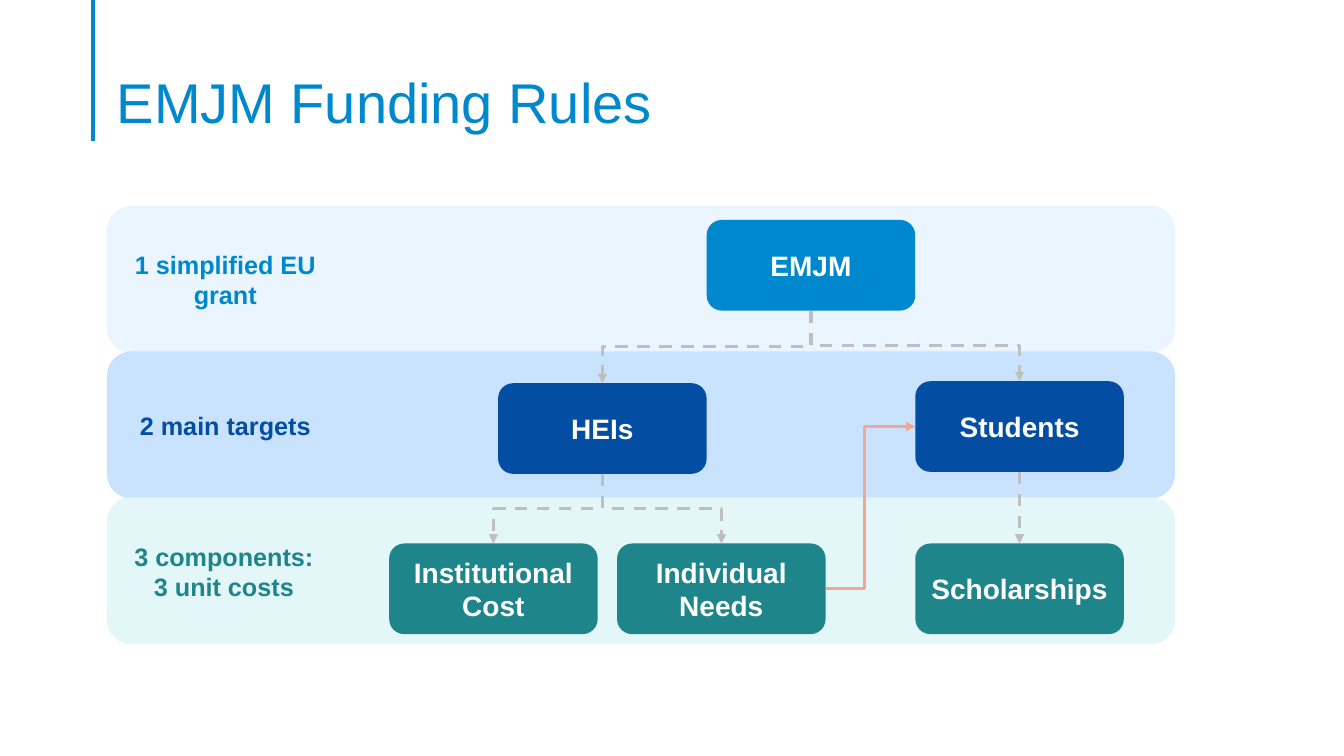
from pptx import Presentation
from pptx.dml.color import RGBColor
from pptx.enum.dml import MSO_LINE
from pptx.enum.shapes import MSO_CONNECTOR, MSO_SHAPE
from pptx.enum.text import MSO_ANCHOR, PP_ALIGN
from pptx.oxml.ns import qn
from pptx.util import Pt
from lxml import etree

BLUE, NAVY, TEAL = "0088CE", "034EA2", "1E858B"
GREY, CORAL, WHITE = "BFBFBF", "F1A798", "FFFFFF"
TOP, LEFT, BOTTOM, RIGHT = range(4)
NODE_W, NODE_H = 149, 64.8


def color(code):
    return RGBColor.from_string(code)


def write(shape, text, size=20, ink=WHITE, bold=True, align=PP_ALIGN.CENTER,
          anchor=MSO_ANCHOR.MIDDLE, spacing=None):
    frame = shape.text_frame
    frame.word_wrap = True
    frame.vertical_anchor = anchor
    frame.text = text
    for para in frame.paragraphs:
        para.alignment = align
        para.line_spacing = spacing
        font = para.font
        font.name, font.size, font.bold = "Arial", Pt(size), bold
        font.color.rgb = color(ink)


def panel(slide, x, y, w, h, fill):
    shape = slide.shapes.add_shape(
        MSO_SHAPE.ROUNDED_RECTANGLE, Pt(x), Pt(y), Pt(w), Pt(h))
    shape.shadow.inherit = False
    shape.fill.solid()
    shape.fill.fore_color.rgb = color(fill)
    shape.line.fill.background()
    return shape


def label(slide, x, y, w, h, text, **style):
    box = slide.shapes.add_textbox(Pt(x), Pt(y), Pt(w), Pt(h))
    write(box, text, **style)


def stroke(slide, kind, ink, ends=(0, 0, 0, 0)):
    line = slide.shapes.add_connector(kind, *[Pt(v) for v in ends])
    line.line.color.rgb = color(ink)
    line.line.width = Pt(2.25)
    etree.SubElement(line._element.spPr, qn("a:effectLst"))
    return line


def arrow(slide, start, end, sides=(BOTTOM, TOP), ink=GREY, dash=True,
          kind=MSO_CONNECTOR.ELBOW):
    line = stroke(slide, kind, ink)
    line.begin_connect(start, sides[0])
    line.end_connect(end, sides[1])
    if dash:
        line.line.dash_style = MSO_LINE.DASH
    tail = etree.SubElement(line.line._get_or_add_ln(), qn("a:tailEnd"))
    tail.set("type", "triangle")
    return line


def drop(slide, start, end):
    """Elbow that leaves downward: a quarter turn of the sideways elbow."""
    line = arrow(slide, start, end)
    x1, y1, x2, y2 = line.begin_x, line.begin_y, line.end_x, line.end_y
    long, wide = y2 - y1, abs(x2 - x1)
    line.left, line.top = (x1 + x2 - long) // 2, (y1 + y2 - wide) // 2
    line.width, line.height = long, wide
    frame = line._element.spPr.find(qn("a:xfrm"))
    frame.set("rot", str((270 if x2 > x1 else 90) * 60000))
    frame.set("flipH", "1" if x2 > x1 else "0")


def header(slide, x, y, w, h):
    # Accent rule and title
    stroke(slide, MSO_CONNECTOR.STRAIGHT, BLUE, (x, y, x, y + h))
    label(slide, x + 10, y + 38.2, w, 61.9, "EMJM Funding Rules", size=40,
          ink=BLUE, bold=False, align=PP_ALIGN.LEFT,
          anchor=MSO_ANCHOR.BOTTOM, spacing=0.9)


def diagram(slide, x, y, w, h):
    # Bands, each a third of the height with a slight overlap
    step = (h - 105) / 2
    for row, fill in enumerate(("EBF5FF", "C9E3FF", "E3F7F9")):
        panel(slide, x, y + row * step, w, 105, fill)

    # Boxes, as offsets within the diagram
    nodes = {}
    for name, dx, dy, fill in (
            ("EMJM", 428.4, 10.1, BLUE),
            ("HEIs", 279.4, 126.7, NAVY),
            ("Students", 577.4, 125.3, NAVY),
            ("Scholarships", 577.4, 241.2, TEAL),
            ("Individual Needs", 364.4, 241.2, TEAL),
            ("Institutional Cost", 201.6, 241.2, TEAL)):
        nodes[name] = panel(slide, x + dx, y + dy, NODE_W, NODE_H, fill)
        write(nodes[name], name)

    # Dashed flow downwards
    for start, end in (("EMJM", "Students"), ("EMJM", "HEIs"),
                       ("HEIs", "Institutional Cost"),
                       ("HEIs", "Individual Needs")):
        drop(slide, nodes[start], nodes[end])
    arrow(slide, nodes["Students"], nodes["Scholarships"],
          kind=MSO_CONNECTOR.STRAIGHT)

    # Band labels
    for text, dy, wide, high, ink in (
            ("1 simplified EU grant", 27.3, 159, 51, BLUE),
            ("2 main targets", 142.5, 159, 29, NAVY),
            ("3 components:\n3 unit costs", 235.4, 157, 51, TEAL)):
        label(slide, x + 5, y + dy, wide, high, text, size=18, ink=ink)

    # Link from needs to students, bent left of its middle
    link = arrow(slide, nodes["Individual Needs"], nodes["Students"],
                 (RIGHT, LEFT), CORAL, dash=False)
    shape = link._element.spPr.find(qn("a:prstGeom"))
    bends = shape.find(qn("a:avLst"))
    if bends is None:
        bends = etree.SubElement(shape, qn("a:avLst"))
    etree.SubElement(bends, qn("a:gd"), name="adj1", fmla="val 43600")


def main():
    deck = Presentation()
    deck.slide_width, deck.slide_height = Pt(960), Pt(540)
    slide = deck.slides.add_slide(deck.slide_layouts[6])
    header(slide, 66.4, 0, 828, 101)
    diagram(slide, 76.4, 147, 763, 313.2)
    deck.save("out.pptx")


if __name__ == "__main__":
    main()
